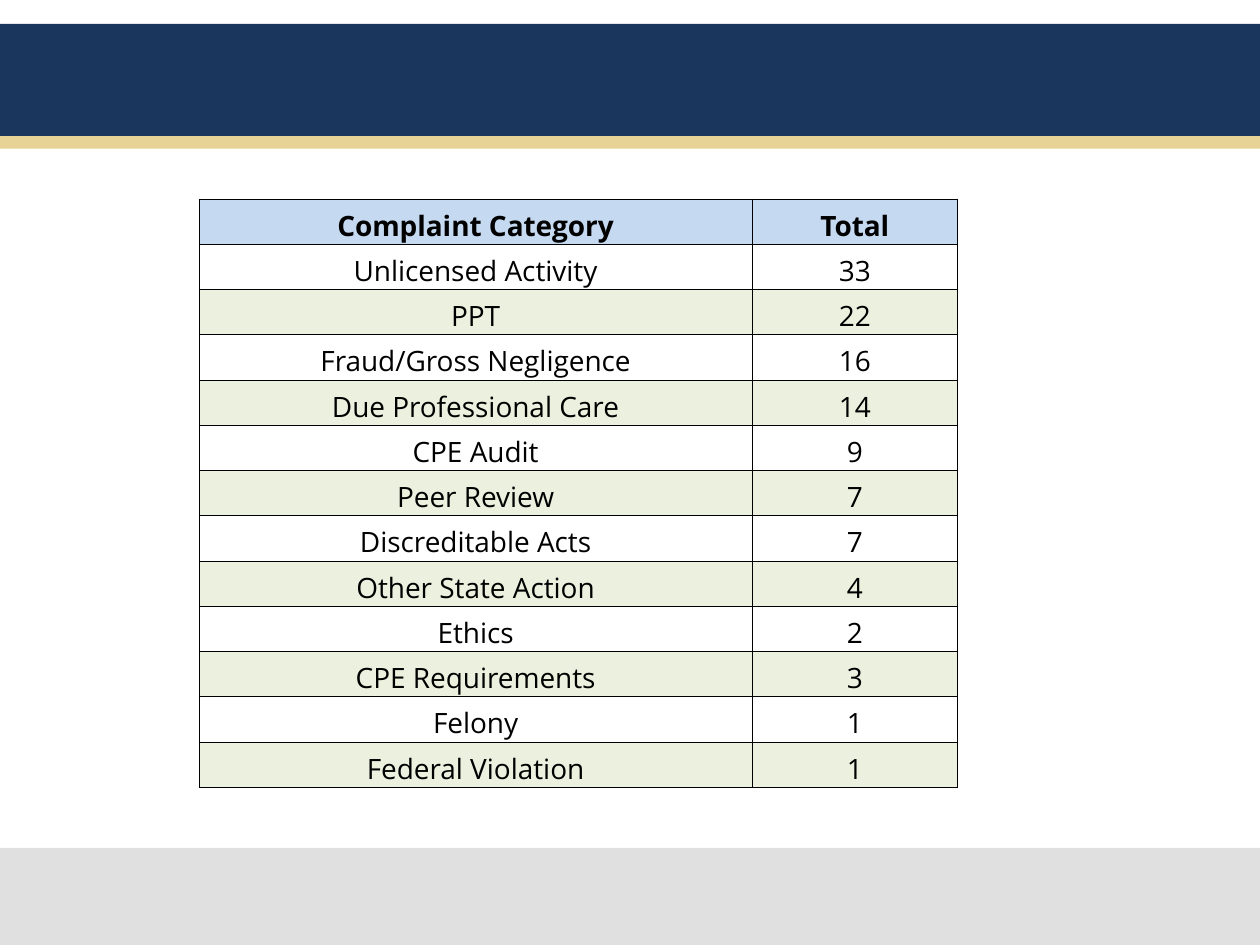
from lxml.etree import SubElement
from pptx import Presentation
from pptx.dml.color import RGBColor
from pptx.enum.shapes import MSO_SHAPE
from pptx.enum.text import MSO_ANCHOR, PP_ALIGN
from pptx.oxml.ns import qn
from pptx.util import Inches, Pt

NAVY = RGBColor(0x1B, 0x36, 0x5D)
GOLD = RGBColor(0xE6, 0xD3, 0x95)
GRAY = RGBColor(0xE0, 0xE0, 0xE0)
HEADER_BLUE = RGBColor(0xC5, 0xD9, 0xF1)
BAND_GREEN = RGBColor(0xEB, 0xF1, 0xDE)
BLACK = RGBColor(0, 0, 0)

BANDS = [(0.19, 0.89, NAVY), (1.08, 0.1, GOLD), (6.73, 0.77, GRAY)]
COMPLAINTS = [
    ("Complaint Category", "Total"),
    ("Unlicensed Activity", 33),
    ("PPT", 22),
    ("Fraud/Gross Negligence", 16),
    ("Due Professional Care", 14),
    ("CPE Audit", 9),
    ("Peer Review", 7),
    ("Discreditable Acts", 7),
    ("Other State Action", 4),
    ("Ethics", 2),
    ("CPE Requirements", 3),
    ("Felony", 1),
    ("Federal Violation", 1),
]
COLUMN_WIDTHS = [Inches(4.39), Inches(1.63)]
TABLE_HEIGHT = Inches(4.67)


def write_text(frame, text, size=16, bold=False, color=BLACK, font="Open Sans"):
    paragraph = frame.paragraphs[0]
    paragraph.alignment = PP_ALIGN.CENTER
    run = paragraph.add_run()
    run.text = text
    run.font.name = font
    run.font.size = Pt(size)
    run.font.bold = bold
    run.font.color.rgb = color


def add_borders(cell, color=BLACK, width=0.5):
    properties = cell._tc.get_or_add_tcPr()
    for side in ("a:lnL", "a:lnR", "a:lnT", "a:lnB"):
        line = SubElement(properties, qn(side), w=str(Pt(width)))
        fill = SubElement(line, qn("a:solidFill"))
        SubElement(fill, qn("a:srgbClr"), val=str(color))


presentation = Presentation()
presentation.slide_width = Inches(10)
presentation.slide_height = Inches(7.5)
slide = presentation.slides.add_slide(presentation.slide_layouts[6])

for top, height, color in BANDS:
    band = slide.shapes.add_shape(
        MSO_SHAPE.RECTANGLE, 0, Inches(top), presentation.slide_width, Inches(height)
    )
    band.shadow.inherit = False
    band.fill.solid()
    band.fill.fore_color.rgb = color
    band.line.fill.background()

table = slide.shapes.add_table(
    len(COMPLAINTS), len(COLUMN_WIDTHS),
    Inches(1.58), Inches(1.58), sum(COLUMN_WIDTHS), TABLE_HEIGHT,
).table
table.horz_banding = False
for column, width in zip(table.columns, COLUMN_WIDTHS):
    column.width = width

for row_index, values in enumerate(COMPLAINTS):
    is_header = row_index == 0
    for column_index, value in enumerate(values):
        cell = table.cell(row_index, column_index)
        cell.vertical_anchor = MSO_ANCHOR.BOTTOM
        cell.margin_left = cell.margin_right = cell.margin_top = Inches(0.01)
        cell.margin_bottom = 0
        add_borders(cell)
        if row_index % 2:
            cell.fill.background()
        else:
            cell.fill.solid()
            cell.fill.fore_color.rgb = HEADER_BLUE if is_header else BAND_GREEN
        write_text(cell.text_frame, str(value), bold=is_header)

presentation.save("out.pptx")
